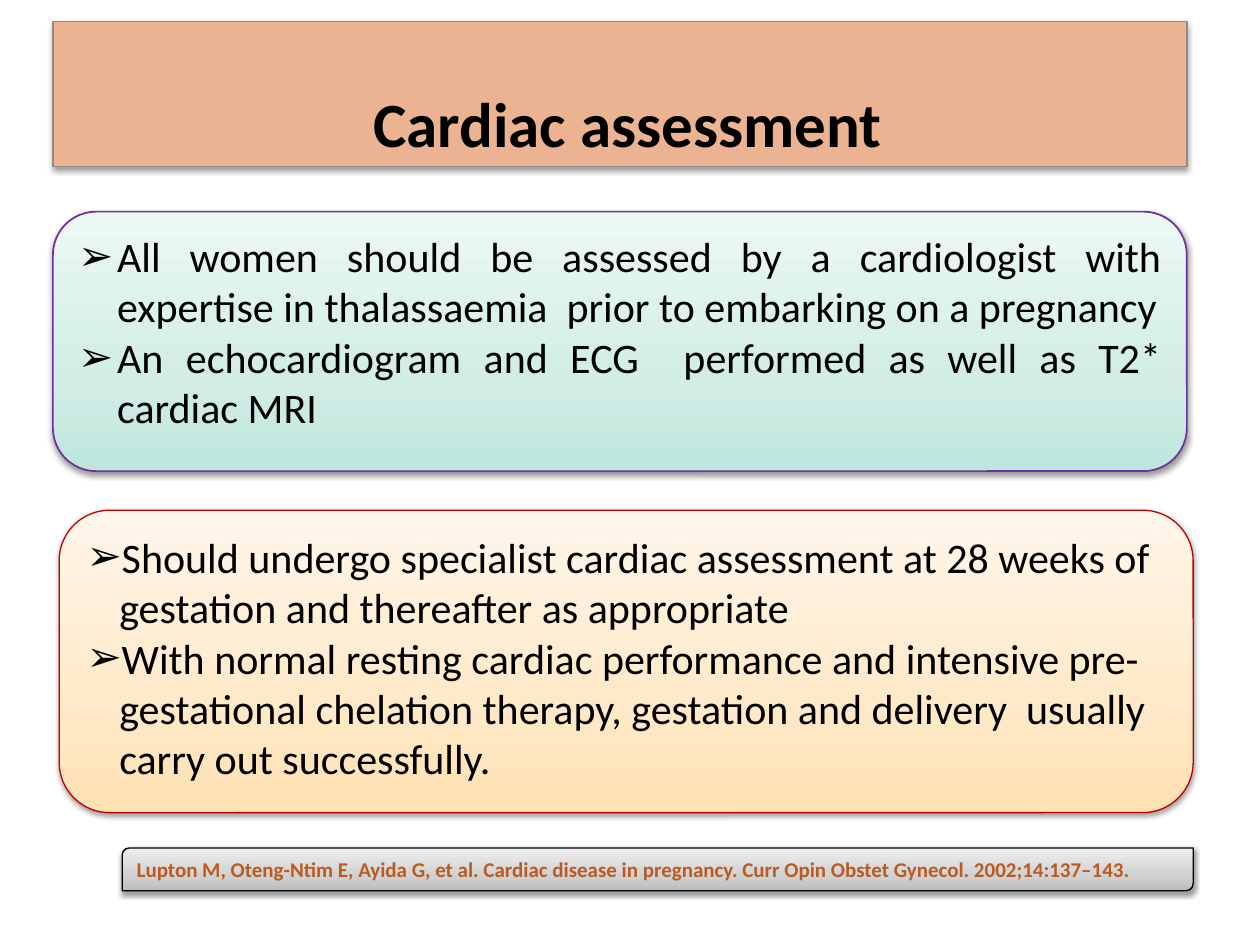
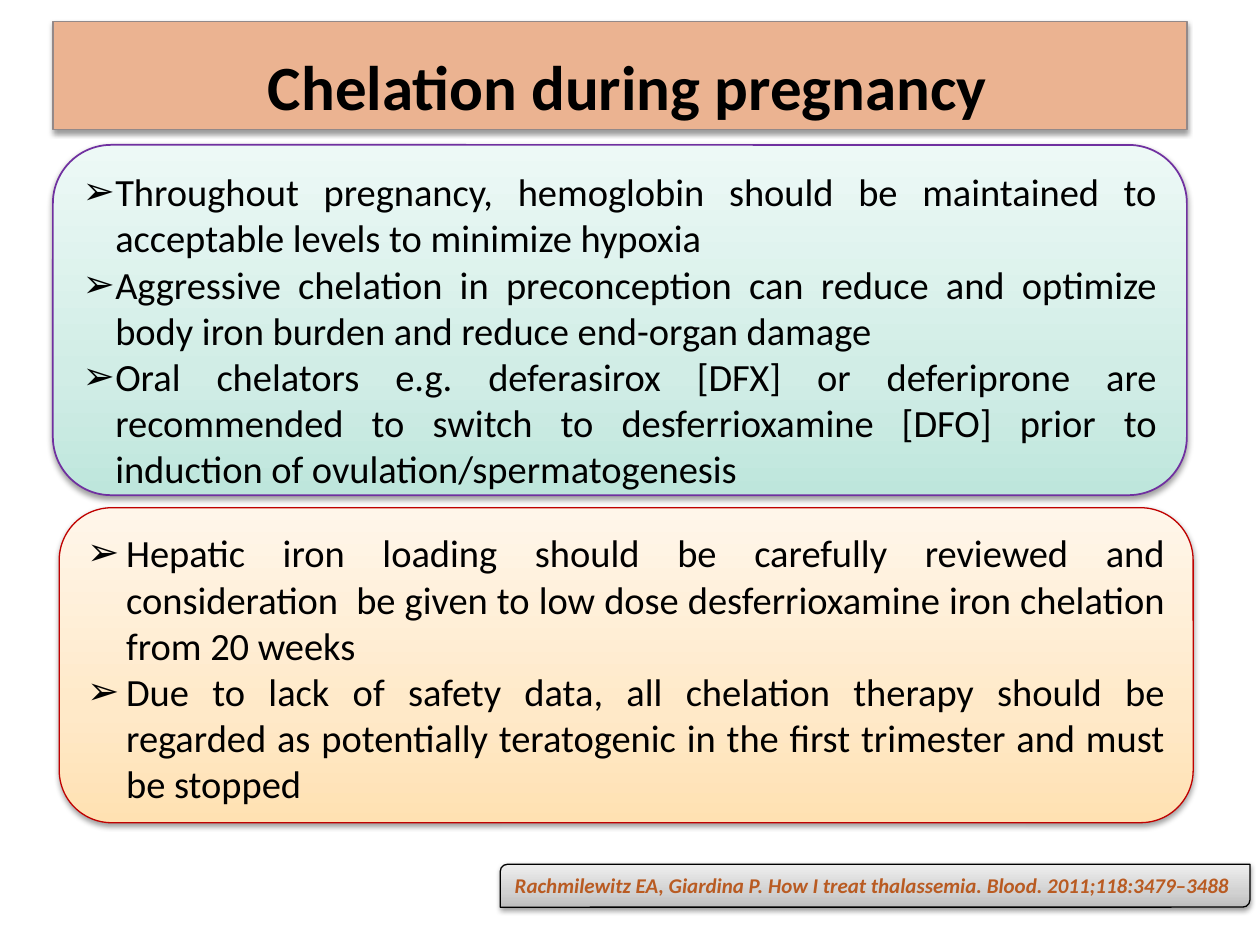
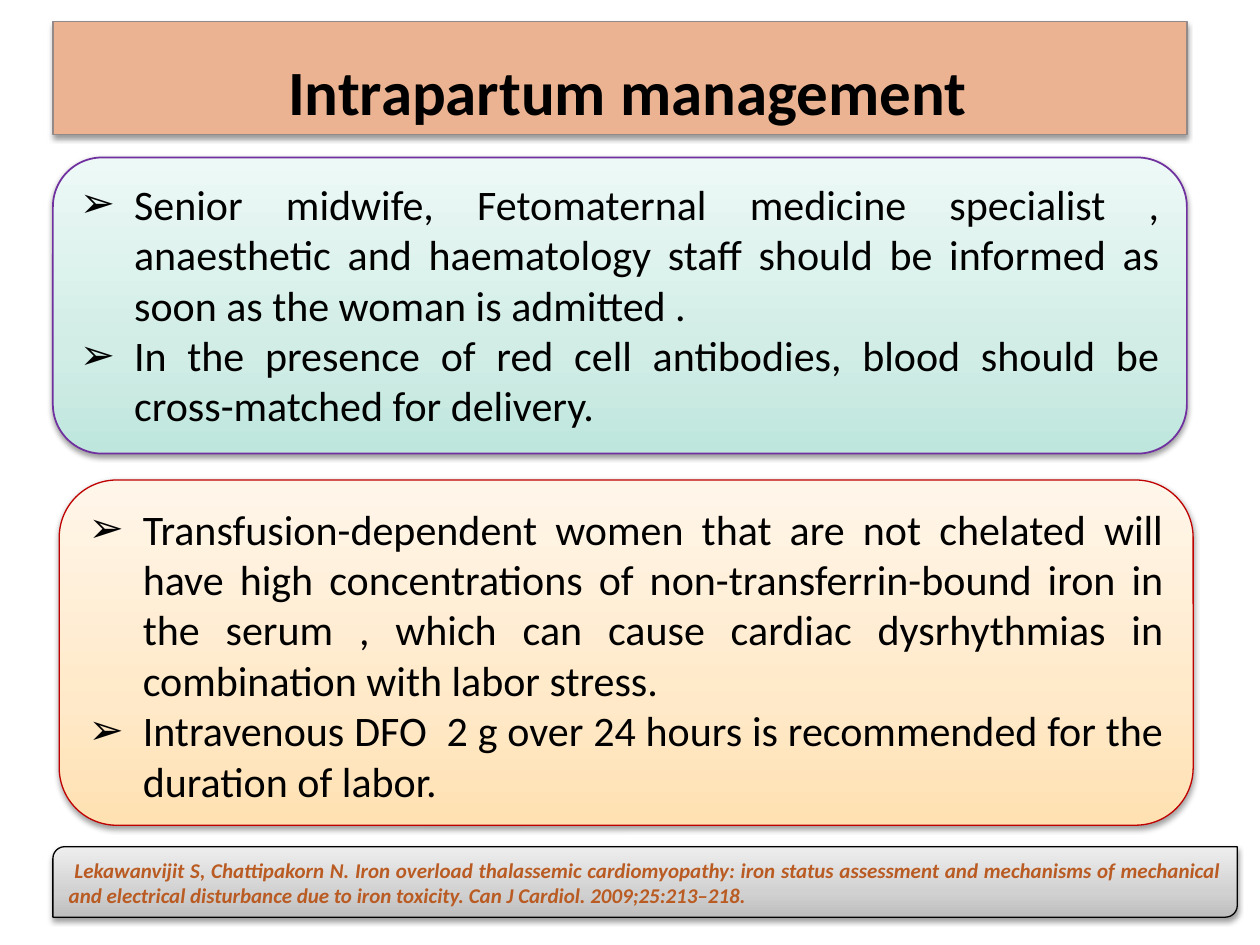
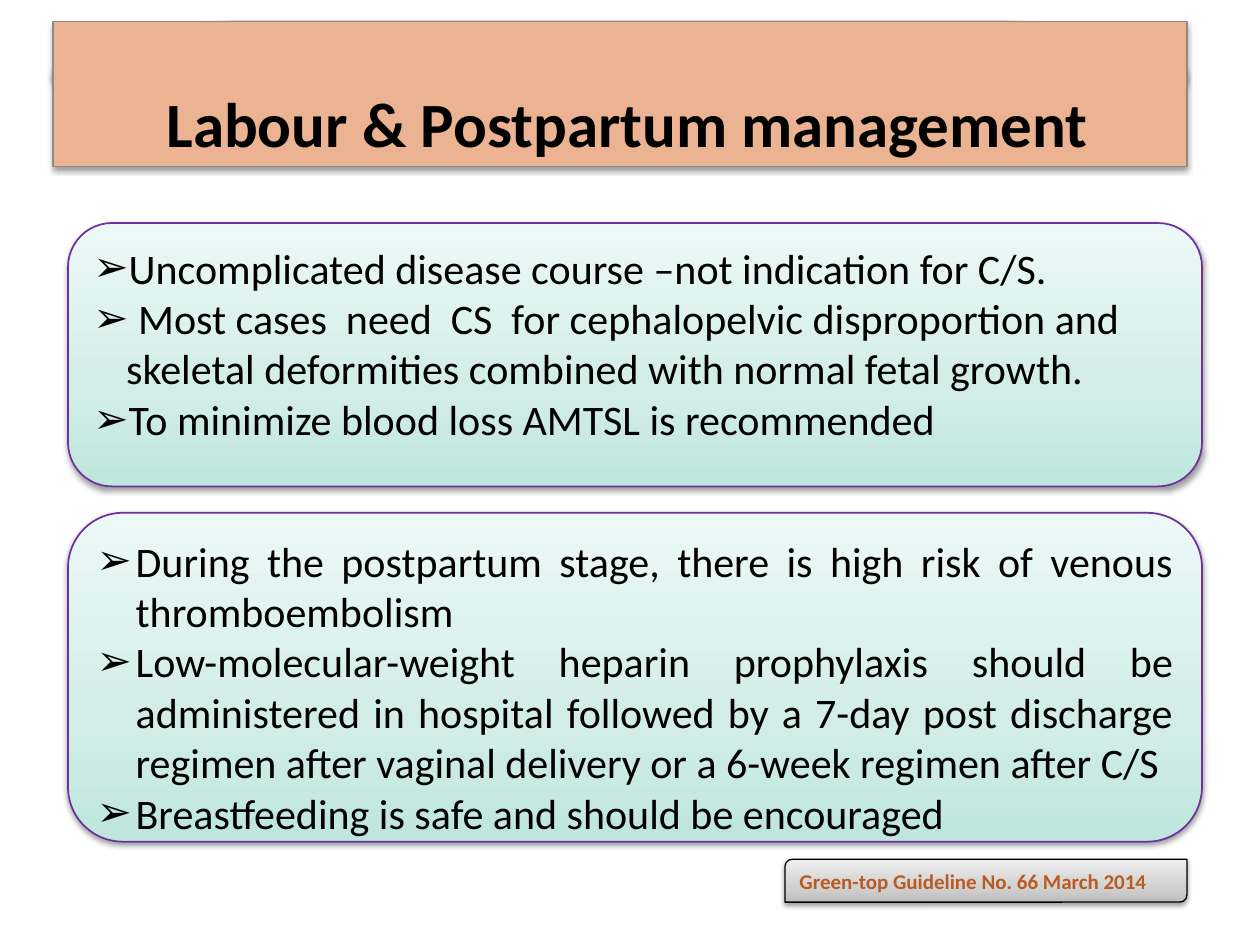
"""Build four slides on cardiac care and chelation in thalassaemia pregnancies."""
from dataclasses import dataclass

from lxml import etree
from pptx import Presentation
from pptx.dml.color import RGBColor
from pptx.enum.shapes import MSO_SHAPE as SHAPE
from pptx.enum.text import MSO_ANCHOR as ANCHOR, MSO_AUTO_SIZE as FIT, PP_ALIGN as ALIGN
from pptx.oxml import parse_xml
from pptx.oxml.ns import nsdecls, qn
from pptx.util import Inches, Pt


@dataclass(frozen=True)
class Theme:
    font: str = "Calibri"
    text: str = "000000"
    cite_text: str = "B95B22"
    title_fill: tuple = ("EBB391",)
    title_line: tuple = ("938989", 0.75)
    mint: tuple = ("BEE6DC", "D1EDE6", "EDF9F6")
    mint_line: tuple = ("7030A0", 1)
    peach: tuple = ("FFE1B2", "FFE9C8", "FFF6EA")
    peach_line: tuple = ("C00000", 0.75)
    grey: tuple = ("BDBDBD", "D1D1D1", "EEEEEE")
    grey_line: tuple = ("000000", 0.75)
    title_size: int = 36
    body_size: int = 24
    small_body_size: int = 22
    cite_size: int = 12
    bullet: str = "➢"
    left: float = 0.42
    width: float = 9


class Deck:
    """Hold the theme and the current slide."""

    def __init__(self, theme):
        self.theme = theme
        self.prs = Presentation()
        self.prs.slide_width, self.prs.slide_height = Inches(10), Inches(7.5)
        self.s = None

    def slide(self):
        self.s = self.prs.slides.add_slide(self.prs.slide_layouts[3])

    def place(self, idx, preset, x, y, w, h):
        sp = self.s.placeholders[idx]
        sp.left, sp.top, sp.width, sp.height = (Inches(v) for v in (x, y, w, h))
        sp._element.spPr.append(parse_xml(
            f'<a:prstGeom {nsdecls("a")} prst="{preset}"><a:avLst/></a:prstGeom>'))
        sp._element.getparent().append(sp._element)
        return sp

    def dress(self, sp, colours, line):
        spPr = sp._element.spPr
        if len(colours) == 1:
            sp.fill.solid()
            sp.fill.fore_color.rgb = RGBColor.from_string(colours[0])
        else:
            stops = "".join(f'<a:gs pos="{pos * 1000}"><a:srgbClr val="{c}"/></a:gs>'
                            for pos, c in zip((0, 35, 100), colours))
            spPr.append(parse_xml(
                f'<a:gradFill {nsdecls("a")} rotWithShape="1"><a:gsLst>{stops}</a:gsLst>'
                '<a:lin ang="16200000" scaled="0"/></a:gradFill>'))
        sp.line.color.rgb = RGBColor.from_string(line[0])
        sp.line.width = Pt(line[1])
        spPr.append(parse_xml(
            f'<a:effectLst {nsdecls("a")}><a:outerShdw blurRad="{Pt(3.1)}" dist="{Pt(1.6)}" '
            'dir="5400000" rotWithShape="0"><a:srgbClr val="000000"><a:alpha val="38000"/>'
            '</a:srgbClr></a:outerShdw></a:effectLst>'))

    def frame(self, sp, anchor, fit=FIT.NONE):
        tf = sp.text_frame
        tf.word_wrap = True
        tf.auto_size = fit
        tf.vertical_anchor = anchor
        return tf

    def add_text(self, p, text, size, colour, align, bold=False, italic=False):
        p.alignment = align
        r = p.add_run()
        r.text = text
        r.font.name = self.theme.font
        r.font.size = Pt(size)
        r.font.bold, r.font.italic = bold, italic
        r.font.color.rgb = RGBColor.from_string(colour)

    def indent(self, p, margin, hanging):
        pPr = p._p.get_or_add_pPr()
        pPr.set("marL", str(Inches(margin)))
        pPr.set("indent", str(-Inches(hanging)))
        return pPr

    def title(self, text, h):
        t = self.theme
        sp = self.place(0, "flowChartTerminator", t.left, 0.17, t.width, h)
        self.dress(sp, t.title_fill, t.title_line)
        p = self.frame(sp, ANCHOR.BOTTOM).paragraphs[0]
        p.line_spacing, p.space_before = 1.5, Pt(4)
        self.indent(p, 0.4, 0.28)
        self.add_text(p, text, t.title_size, t.text, ALIGN.CENTER, bold=True)

    def pill(self, h):
        t = self.theme
        sp = self.s.shapes.add_shape(SHAPE.FLOWCHART_TERMINATOR, Inches(t.left), Inches(0.17),
                                     Inches(t.width), Inches(h))
        self.dress(sp, t.title_fill, t.title_line)

    def box(self, idx, x, y, h, items, indent, colours, line, size=None, align=ALIGN.JUSTIFY):
        t = self.theme
        sp = self.place(idx, "roundRect", x, y, t.width, h)
        self.dress(sp, colours, line)
        tf = self.frame(sp, ANCHOR.TOP)
        for i, item in enumerate(items):
            p = tf.add_paragraph() if i else tf.paragraphs[0]
            p.space_before = Pt(0)
            pPr = self.indent(p, indent, indent)
            etree.SubElement(pPr, qn("a:buChar")).set("char", t.bullet)
            self.add_text(p, item, size or t.body_size, t.text, align)

    def mint_box(self, idx, x, y, h, items, indent, **style):
        self.box(idx, x, y, h, items, indent, self.theme.mint, self.theme.mint_line, **style)

    def peach_box(self, y, h, items, indent, **style):
        self.box(2, 0.47, y, h, items, indent, self.theme.peach, self.theme.peach_line, **style)

    def citation(self, x, y, w, text, h=0.34, italic=False, anchor=ANCHOR.TOP, align=ALIGN.JUSTIFY):
        t = self.theme
        sp = self.s.shapes.add_shape(SHAPE.ROUND_2_DIAG_RECTANGLE, Inches(x), Inches(y),
                                     Inches(w), Inches(h))
        self.dress(sp, t.grey, t.grey_line)
        tf = self.frame(sp, anchor, FIT.SHAPE_TO_FIT_TEXT)
        self.add_text(tf.paragraphs[0], text, t.cite_size, t.cite_text, align,
                      bold=True, italic=italic)


def main():
    t = Theme()
    d = Deck(t)

    d.slide()
    d.title("Cardiac assessment", 1.15)
    d.mint_box(1, t.left, 1.68, 2.06, [
        "All women should be assessed by a cardiologist with expertise in thalassaemia  prior to "
        "embarking on a pregnancy",
        "An echocardiogram and ECG  performed as well as T2* cardiac MRI",
    ], 0.31)
    d.peach_box(4.05, 2.4, [
        "Should undergo specialist cardiac assessment at 28 weeks of gestation and thereafter as "
        "appropriate",
        "With normal resting cardiac performance and intensive pre- gestational chelation therapy, "
        "gestation and delivery  usually carry out successfully.",
    ], 0.26, align=ALIGN.LEFT)
    d.citation(0.97, 6.73, 8.5, "Lupton M, Oteng-Ntim E, Ayida G, et al. Cardiac disease in "
               "pregnancy. Curr Opin Obstet Gynecol. 2002;14:137–143.")

    d.slide()
    d.title("Chelation during pregnancy", 0.86)
    d.mint_box(1, t.left, 1.15, 2.78, [
        "Throughout pregnancy, hemoglobin should be maintained to acceptable levels to minimize "
        "hypoxia",
        "Aggressive chelation in preconception can reduce and optimize body iron burden and reduce "
        "end-organ damage",
        "Oral chelators e.g. deferasirox [DFX] or deferiprone are recommended to switch to "
        "desferrioxamine [DFO] prior to induction of ovulation/spermatogenesis",
    ], 0.26, size=t.small_body_size)
    d.peach_box(4.03, 2.5, [
        "Hepatic iron loading should be carefully reviewed and consideration  be given to low dose "
        "desferrioxamine iron chelation from 20 weeks",
        "Due to lack of safety data, all chelation therapy should be regarded as potentially "
        "teratogenic in the first trimester and must be stopped",
    ], 0.31, size=t.small_body_size)
    d.citation(3.97, 6.86, 5.95, "Rachmilewitz EA, Giardina P. How I treat thalassemia. Blood. "
               "2011;118:3479–3488", italic=True)

    d.slide()
    d.title("Intrapartum management", 0.9)
    d.mint_box(1, t.left, 1.25, 2.35, [
        "Senior midwife, Fetomaternal medicine specialist , anaesthetic and haematology staff "
        "should be informed as soon as the woman is admitted .",
        "In the presence of red cell antibodies, blood should be cross-matched for delivery.",
    ], 0.43)
    d.peach_box(3.81, 2.74, [
        "Transfusion-dependent women that are not chelated will have high concentrations of "
        "non-transferrin-bound iron in the serum , which can cause cardiac dysrhythmias in "
        "combination with labor stress.",
        "Intravenous DFO  2 g over 24 hours is recommended for the duration of labor.",
    ], 0.43)
    d.citation(0.42, 6.72, 9.4, " Lekawanvijit S, Chattipakorn N. Iron overload thalassemic "
               "cardiomyopathy: iron status assessment and mechanisms of mechanical and electrical "
               "disturbance due to iron toxicity. Can J Cardiol. 2009;25:213–218.",
               h=0.56, italic=True, anchor=ANCHOR.BOTTOM)

    d.slide()
    d.pill(0.84)
    d.mint_box(1, 0.54, 1.77, 2.09, [
        "Uncomplicated disease course –not indication for C/S.",
        " Most cases  need  CS  for cephalopelvic disproportion and skeletal deformities combined "
        "with normal fetal growth.",
        "To minimize blood loss AMTSL is recommended",
    ], 0.26, align=ALIGN.LEFT)
    d.citation(6.23, 6.82, 3.19, "Green-top Guideline No. 66 March 2014",
               anchor=ANCHOR.BOTTOM, align=ALIGN.LEFT)
    d.mint_box(2, 0.54, 4.07, 2.61, [
        "During the postpartum stage, there is high risk of venous thromboembolism",
        "Low-molecular-weight heparin prophylaxis should be administered in hospital followed by a "
        "7-day post discharge regimen after vaginal delivery or a 6-week regimen after C/S",
        "Breastfeeding is safe and should be encouraged",
    ], 0.31)
    d.title("Labour & Postpartum management", 1.15)

    d.prs.save("out.pptx")


if __name__ == "__main__":
    main()
